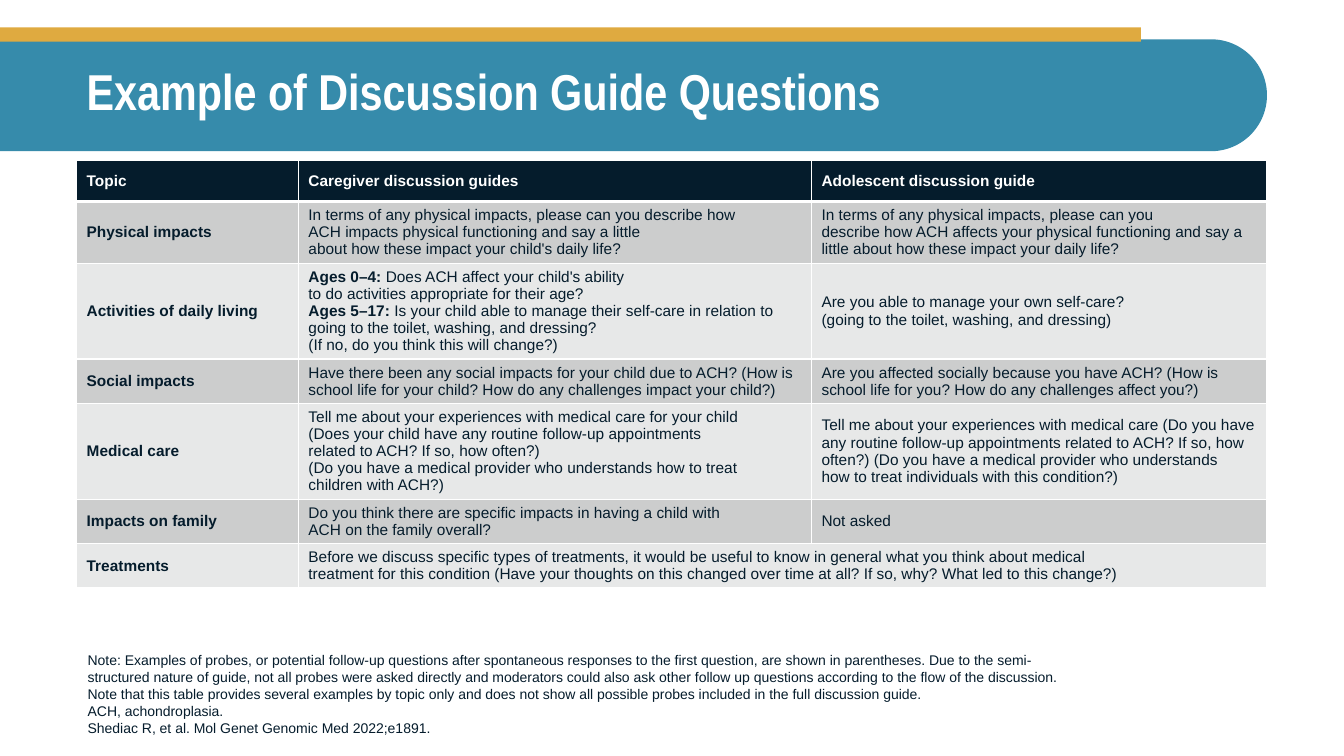
from dataclasses import dataclass

from lxml.etree import SubElement
from pptx import Presentation
from pptx.dml.color import RGBColor
from pptx.enum.shapes import MSO_SHAPE
from pptx.enum.text import MSO_ANCHOR, MSO_AUTO_SIZE, PP_ALIGN
from pptx.oxml.ns import qn
from pptx.shapes.autoshape import Shape
from pptx.slide import Slide
from pptx.table import Table, _Cell
from pptx.text.text import TextFrame, _Run
from pptx.util import Cm, Pt


@dataclass(frozen=True)
class Theme:
    ink: str = "051C2C"
    white: str = "FFFFFF"
    teal: str = "368BAB"
    gold: str = "DFAA40"
    bands: tuple[str, str] = ("CCCDCD", "E7E8E8")
    body_font: str = "Arial"
    title_font: str = "Arial Narrow"
    title_size: int = 36
    table_size: int = 11
    note_size: int = 10
    border: float = 1
    header_border: float = 3


@dataclass(frozen=True)
class Box:
    left: float
    top: float
    width: float
    height: float

    def lengths(self) -> tuple[Cm, Cm, Cm, Cm]:
        return Cm(self.left), Cm(self.top), Cm(self.width), Cm(self.height)


@dataclass(frozen=True)
class Question:
    topic: str
    caregiver: str
    adolescent: str | None  # None: the caregiver cell spans both guides


THEME = Theme()
BANNER = Box(0, 0.99, 31.93, 2.82)
GOLD_BAR = Box(0, 0.69, 28.75, 0.36)
TITLE = Box(1.93, 0.99, 30, 2.79)
GUIDE = Box(1.93, 4.04, 30, 11.4)
NOTE = Box(1.96, 17.04, 25.1, 1.63)
COLUMN_WIDTHS = (5.59, 12.93, 11.48)
ROW_HEIGHT = 1.04

HEADINGS = ("Topic", "Caregiver discussion guides", "Adolescent discussion guide")
QUESTIONS = (
    Question(
        "Physical impacts",
        "In terms of any physical impacts, please can you describe how\n"
        "ACH impacts physical functioning and say a little\n"
        "about how these impact your child's daily life?",
        "In terms of any physical impacts, please can you\n"
        "describe how ACH affects your physical functioning and say a "
        "little about how these impact your daily life?",
    ),
    Question(
        "Activities of daily living",
        "Ages 0–4: Does ACH affect your child's ability\n"
        "to do activities appropriate for their age?\n"
        "Ages 5–17: Is your child able to manage their self-care in relation to "
        "going to the toilet, washing, and dressing?\n"
        "(If no, do you think this will change?)",
        "Are you able to manage your own self-care?\n"
        "(going to the toilet, washing, and dressing)",
    ),
    Question(
        "Social impacts",
        "Have there been any social impacts for your child due to ACH? (How is "
        "school life for your child? How do any challenges impact your child?)",
        "Are you affected socially because you have ACH? (How is "
        "school life for you? How do any challenges affect you?)",
    ),
    Question(
        "Medical care",
        "Tell me about your experiences with medical care for your child\n"
        "(Does your child have any routine follow-up appointments\n"
        "related to ACH? If so, how often?)\n"
        "(Do you have a medical provider who understands how to treat\n"
        "children with ACH?)",
        "Tell me about your experiences with medical care (Do you have "
        "any routine follow-up appointments related to ACH? If so, how "
        "often?) (Do you have a medical provider who understands\n"
        "how to treat individuals with this condition?)",
    ),
    Question(
        "Impacts on family",
        "Do you think there are specific impacts in having a child with\n"
        "ACH on the family overall?",
        "Not asked",
    ),
    Question(
        "Treatments",
        "Before we discuss specific types of treatments, it would be useful to know "
        "in general what you think about medical\n"
        "treatment for this condition (Have your thoughts on this changed over time "
        "at all? If so, why? What led to this change?)",
        None,
    ),
)
NOTE_TEXT = (
    "Note: Examples of probes, or potential follow-up questions after spontaneous "
    "responses to the first question, are shown in parentheses. Due to the "
    "semi-structured nature of guide, not all probes were asked directly and moderators "
    "could also ask other follow up questions according to the flow of the discussion.\n"
    "Note that this table provides several examples by topic only and does not show "
    "all possible probes included in the full discussion guide.\n"
    "ACH, achondroplasia.\n"
    "Shediac R, et al. Mol Genet Genomic Med 2022;e1891."
)


def style_span(span: _Run, size: int, color: str, bold: bool, font: str = THEME.body_font) -> None:
    span.font.name, span.font.size, span.font.bold = font, Pt(size), bold
    span.font.color.rgb = RGBColor.from_string(color)


def write(frame: TextFrame, text: str, size: int, color: str, bold: bool = False) -> None:
    """Write one paragraph a line; an opening age range is bold."""
    frame.text = text
    for para in frame.paragraphs:
        if para.text.startswith("Ages "):
            ages, colon, question = para.text.partition(": ")
            para.text = ages + colon
            style_span(para.runs[0], size, color, True)
            span = para.add_run()
            span.text = question
        else:
            span = para.runs[0]
        style_span(span, size, color, bold)


def add_bar(page: Slide, kind: MSO_SHAPE, box: Box, color: str) -> Shape:
    bar = page.shapes.add_shape(kind, *box.lengths())
    bar.shadow.inherit = False
    bar.fill.solid()
    bar.fill.fore_color.rgb = RGBColor.from_string(color)
    bar.line.fill.background()
    return bar


def add_banner(page: Slide) -> None:
    # An upright shape turned a quarter, so its round end points right
    shift = (BANNER.width - BANNER.height) / 2
    upright = Box(BANNER.left + shift, BANNER.top - shift, BANNER.height, BANNER.width)
    banner = add_bar(page, MSO_SHAPE.ROUND_2_SAME_RECTANGLE, upright, THEME.teal)
    banner.adjustments[0], banner.adjustments[1] = 0, 0.5
    banner.rotation = 270
    add_bar(page, MSO_SHAPE.RECTANGLE, GOLD_BAR, THEME.gold)


def set_title(page: Slide, text: str) -> None:
    title = page.shapes.title
    page.shapes._spTree.append(title._element)  # in front of the banner
    title.left, title.top, title.width, title.height = TITLE.lengths()
    frame = title.text_frame
    frame.text = text
    frame.auto_size, frame.vertical_anchor = MSO_AUTO_SIZE.NONE, MSO_ANCHOR.MIDDLE
    para = frame.paragraphs[0]
    para.alignment, para.line_spacing = PP_ALIGN.LEFT, 0.9
    style_span(para.runs[0], THEME.title_size, THEME.white, True, THEME.title_font)


def fill_cell(table: Table, row: int, column: int, text: str) -> _Cell:
    cell = table.cell(row, column)
    header = row == 0
    # Borders come before the fill in the cell properties
    thick = {0: "lnB", 1: "lnT"}.get(row)
    for side in ("lnL", "lnR", "lnT", "lnB"):
        width = THEME.header_border if side == thick else THEME.border
        line = SubElement(cell._tc.get_or_add_tcPr(), qn(f"a:{side}"), w=str(Pt(width)))
        SubElement(SubElement(line, qn("a:solidFill")), qn("a:srgbClr"), val=THEME.white)
    cell.fill.solid()
    fill = THEME.ink if header else THEME.bands[(row - 1) % 2]
    cell.fill.fore_color.rgb = RGBColor.from_string(fill)
    cell.vertical_anchor = MSO_ANCHOR.MIDDLE
    color = THEME.white if header else THEME.ink
    write(cell.text_frame, text, THEME.table_size, color, header or column == 0)
    return cell


def add_guide(page: Slide) -> None:
    holder = page.shapes.add_table(len(QUESTIONS) + 1, len(HEADINGS), *GUIDE.lengths())
    table = holder.table
    for column, width in zip(table.columns, COLUMN_WIDTHS):
        column.width = Cm(width)
    for row in table.rows:
        row.height = Cm(ROW_HEIGHT)
    holder.height = Cm(GUIDE.height)
    rows = [HEADINGS] + [(item.topic, item.caregiver, item.adolescent) for item in QUESTIONS]
    for row, texts in enumerate(rows):
        for column, text in enumerate(texts):
            if text is None:
                table.cell(row, column - 1).merge(table.cell(row, column))
            else:
                fill_cell(table, row, column, text)


def add_note(page: Slide) -> None:
    frame = page.shapes.add_textbox(*NOTE.lengths()).text_frame
    frame.word_wrap, frame.vertical_anchor = True, MSO_ANCHOR.BOTTOM
    write(frame, NOTE_TEXT, THEME.note_size, THEME.ink)


def main() -> None:
    deck = Presentation()
    deck.slide_width, deck.slide_height = Cm(33.87), Cm(19.05)
    page = deck.slides.add_slide(deck.slide_layouts[5])
    add_banner(page)
    set_title(page, "Example of Discussion Guide Questions")
    add_guide(page)
    add_note(page)
    deck.save("out.pptx")


if __name__ == "__main__":
    main()
